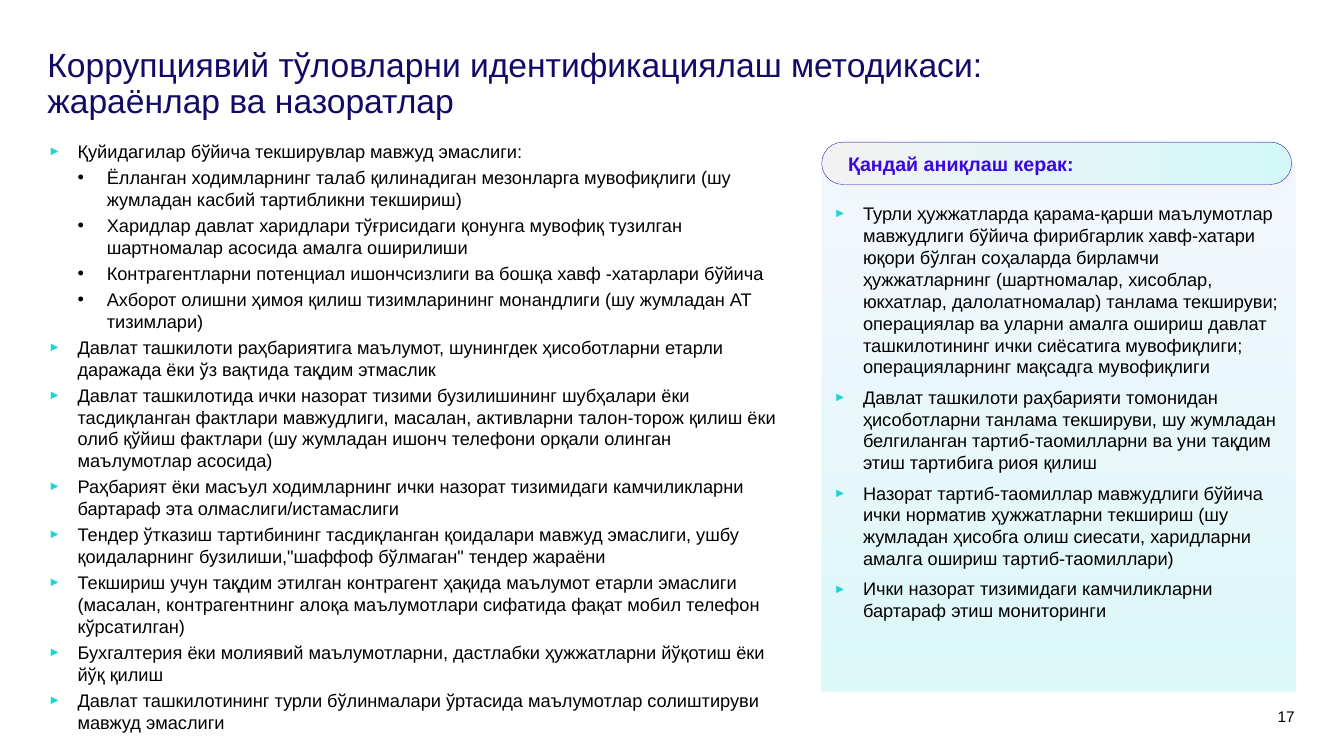
from lxml.etree import SubElement
from pptx import Presentation
from pptx.dml.color import RGBColor
from pptx.enum.shapes import MSO_SHAPE
from pptx.enum.text import MSO_ANCHOR, PP_ALIGN
from pptx.oxml.ns import qn
from pptx.util import Inches, Pt

TITLE = "Коррупциявий тўловларни идентификациялаш методикаси:\vжараёнлар ва назоратлар"
PAGE_NUMBER = "17"
PANEL_HEADING = "Қандай аниқлаш керак:"
RISK_SIGNS = [
    (0, "Қуйидагилар бўйича текширувлар мавжуд эмаслиги:"),
    (1, "Ёлланган ходимларнинг талаб қилинадиган мезонларга мувофиқлиги (шу жумладан касбий тартибликни текшириш)"),
    (1, "Харидлар давлат харидлари тўғрисидаги қонунга мувофиқ тузилган шартномалар асосида амалга оширилиши"),
    (1, "Контрагентларни потенциал ишончсизлиги ва бошқа хавф -хатарлари бўйича"),
    (1, "Ахборот олишни ҳимоя қилиш тизимларининг монандлиги (шу жумладан АТ тизимлари)"),
    (0, "Давлат ташкилоти раҳбариятига маълумот, шунингдек ҳисоботларни етарли даражада ёки ўз вақтида тақдим этмаслик"),
    (0, "Давлат ташкилотида ички назорат тизими бузилишининг шубҳалари ёки тасдиқланган фактлари мавжудлиги, "
        "масалан, активларни талон-торож қилиш ёки олиб қўйиш фактлари (шу жумладан ишонч телефони орқали "
        "олинган маълумотлар асосида)"),
    (0, "Раҳбарият ёки масъул ходимларнинг ички назорат тизимидаги камчиликларни бартараф эта олмаслиги/истамаслиги"),
    (0, "Тендер ўтказиш тартибининг тасдиқланган қоидалари мавжуд эмаслиги, ушбу қоидаларнинг "
        "бузилиши,\"шаффоф бўлмаган\" тендер жараёни"),
    (0, "Текшириш учун тақдим этилган контрагент ҳақида маълумот етарли эмаслиги (масалан, контрагентнинг "
        "алоқа маълумотлари сифатида фақат мобил телефон кўрсатилган)"),
    (0, "Бухгалтерия ёки молиявий маълумотларни, дастлабки ҳужжатларни йўқотиш ёки йўқ қилиш"),
    (0, "Давлат ташкилотининг турли бўлинмалари ўртасида маълумотлар солиштируви мавжуд эмаслиги"),
]
DETECTION_STEPS = [
    (0, "Турли ҳужжатларда қарама-қарши маълумотлар мавжудлиги бўйича фирибгарлик хавф-хатари юқори бўлган "
        "соҳаларда бирламчи ҳужжатларнинг (шартномалар, хисоблар, юкхатлар, далолатномалар) танлама "
        "текшируви; операциялар ва уларни амалга ошириш давлат ташкилотининг ички сиёсатига мувофиқлиги; "
        "операцияларнинг мақсадга мувофиқлиги"),
    (0, "Давлат ташкилоти раҳбарияти томонидан ҳисоботларни танлама текшируви, шу жумладан белгиланган "
        "тартиб-таомилларни ва уни тақдим этиш тартибига риоя қилиш"),
    (0, "Назорат тартиб-таомиллар мавжудлиги бўйича ички норматив ҳужжатларни текшириш (шу жумладан ҳисобга "
        "олиш сиесати, харидларни амалга ошириш тартиб-таомиллари)"),
    (0, "Ички назорат тизимидаги камчиликларни бартараф этиш мониторинги"),
]

BLACK = RGBColor(0x00, 0x00, 0x00)
NAVY = RGBColor(0x13, 0x0A, 0x65)
VIOLET = RGBColor(0x3A, 0x07, 0xDF)
OUTLINE = RGBColor(0x21, 0x12, 0xAE)
TEAL = RGBColor(0x1B, 0xD7, 0xD3)
PERIWINKLE = RGBColor(0xB1, 0xC7, 0xF7)
GREY = RGBColor(0xF2, 0xF2, 0xF2)
PALE_TEAL = RGBColor(0xD4, 0xF8, 0xF8)

FONT = "Arial"
WIDTH, HEIGHT = Inches(13.33), Inches(7.5)
INDENT = Inches(0.29)
BULLETS = [("►", TEAL, 70), ("•", BLACK, 100)]

PERCENT_BOXES = {
    "number": (93.1, 93.6, 3.23, 2.13),
    "signs": (3.6, 18.53, 54.91, 69.47),
    "title": (3.53, 6.4, 82.52, 6.4),
    "panel": (61.14, 21.6, 35.26, 69.87),
    "shade": (61.74, 20, 34.66, 5.6),
    "heading": (61.14, 18.8, 34.96, 5.6),
}


def place(name):
    """Turn a box in percent of the slide into slide lengths."""
    return [int(share * side / 100) for share, side in zip(PERCENT_BOXES[name], (WIDTH, HEIGHT) * 2)]


def set_frame(shape, insets=(0, 0, 0, 0), anchor=MSO_ANCHOR.TOP):
    """Set wrapping, insets and anchor of a text frame."""
    frame = shape.text_frame
    frame.word_wrap = True
    frame.vertical_anchor = anchor
    frame.margin_left, frame.margin_top, frame.margin_right, frame.margin_bottom = map(Inches, insets)
    return frame


def write(frame, text, size, color, bold=False):
    """Write one styled paragraph into a frame."""
    paragraph = frame.paragraphs[0]
    paragraph.text = text
    style(paragraph, size, color, bold)
    return paragraph


def style(paragraph, size, color, bold=False):
    """Set the font and alignment of a paragraph."""
    paragraph.alignment = PP_ALIGN.LEFT
    paragraph.font.name = FONT
    paragraph.font.size = Pt(size)
    paragraph.font.bold = bold
    paragraph.font.color.rgb = color


def write_bullets(frame, items, gap):
    """Write a bulleted list with levels."""
    for index, (level, text) in enumerate(items):
        paragraph = frame.paragraphs[0] if index == 0 else frame.add_paragraph()
        paragraph.text = text
        paragraph.space_after = Pt(gap)
        symbol, color, size = BULLETS[level]
        properties = paragraph._p.get_or_add_pPr()
        properties.set("marL", str(INDENT * (level + 1)))
        properties.set("indent", str(-INDENT))
        SubElement(SubElement(properties, qn("a:buClr")), qn("a:srgbClr"), val=str(color))
        SubElement(properties, qn("a:buSzPct"), val=str(size * 1000))
        SubElement(properties, qn("a:buFont"), typeface=FONT)
        SubElement(properties, qn("a:buChar"), char=symbol)
        style(paragraph, 13, BLACK)


def add_box(slide, name, kind):
    """Add a preset shape without line or shadow."""
    shape = slide.shapes.add_shape(kind, *place(name))
    shape.shadow.inherit = False
    shape.line.fill.background()
    return shape


def fill_gradient(shape, angle, stops):
    """Fill a shape with position, colour and opacity stops."""
    shape.fill.gradient()
    shape.fill.gradient_angle = angle
    for stop, (position, color, opacity) in zip(shape.fill.gradient_stops, stops):
        stop.position = position
        stop.color.rgb = color
    for element, (_, _, opacity) in zip(shape.element.spPr.iter(qn("a:srgbClr")), stops):
        SubElement(element, qn("a:alpha"), val=str(opacity * 1000))


def main():
    """Build and save the slide."""
    presentation = Presentation()
    presentation.slide_width, presentation.slide_height = WIDTH, HEIGHT
    slide = presentation.slides.add_slide(presentation.slide_layouts[6])

    number = slide.shapes.add_textbox(*place("number"))
    write(set_frame(number), PAGE_NUMBER, 11, BLACK).alignment = PP_ALIGN.RIGHT

    signs = slide.shapes.add_textbox(*place("signs"))
    write_bullets(set_frame(signs), RISK_SIGNS, 3)

    title = slide.shapes.add_textbox(*place("title"))
    write(set_frame(title), TITLE, 24, NAVY).line_spacing = 0.9

    panel = add_box(slide, "panel", MSO_SHAPE.RECTANGLE)
    fill_gradient(panel, 270, [(0.02, PERIWINKLE, 14), (1, TEAL, 15)])
    write_bullets(set_frame(panel, (0.12, 0.39, 0.1, 0)), DETECTION_STEPS, 6)

    shade = add_box(slide, "shade", MSO_SHAPE.ROUNDED_RECTANGLE)
    shade.adjustments[0] = 0.5
    shade.fill.solid()
    shade.fill.fore_color.rgb = GREY
    effects = shade.element.spPr.find(qn("a:effectLst"))
    SubElement(effects, qn("a:softEdge"), rad=str(Pt(5)))

    heading = add_box(slide, "heading", MSO_SHAPE.ROUNDED_RECTANGLE)
    heading.adjustments[0] = 0.5
    fill_gradient(heading, 0, [(0, GREY, 100), (1, PALE_TEAL, 100)])
    heading.line.color.rgb = OUTLINE
    heading.line.width = Pt(0.25)
    write(set_frame(heading, (0.2, 0.05, 0.1, 0.05), MSO_ANCHOR.MIDDLE), PANEL_HEADING, 14, VIOLET, True)

    presentation.save("out.pptx")


if __name__ == "__main__":
    main()
